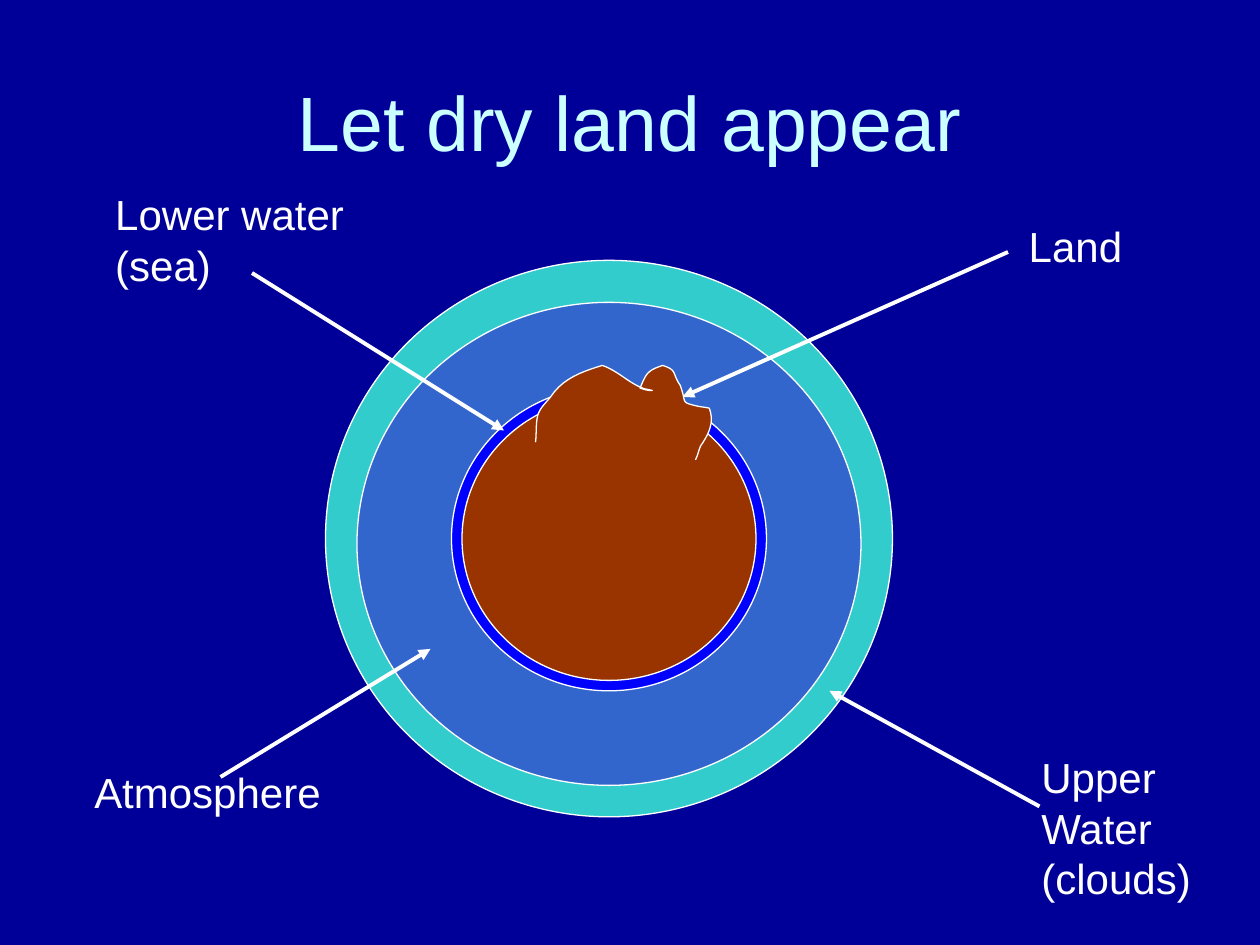
from dataclasses import dataclass

import pptx
import pptx.dml.color
import pptx.enum.shapes
import pptx.enum.text
import pptx.oxml
import pptx.oxml.ns
import pptx.util


@dataclass(frozen=True)
class Theme:
    background: str = "000099"
    title: str = "CCFFFF"
    ink: str = "FFFFFF"
    clouds: str = "33CCCC"
    air: str = "3366CC"
    sea: str = "0000FF"
    land: str = "993300"
    font: str = "Arial"
    title_size: float = 44
    label_size: float = 24
    outline: float = 0.75
    arrow: float = 2.25


@dataclass(frozen=True)
class Area:
    column: float
    row: float
    columns: float
    rows: float


@dataclass(frozen=True)
class Layer:
    color: str
    area: Area


@dataclass(frozen=True)
class Callout:
    text: str
    area: Area
    start: tuple[float, float]
    target: tuple[float, float]


THEME = Theme()
COLUMNS, ROWS = 120, 90  # square cells, a twelfth of an inch each
CELL = pptx.util.Inches(10) // COLUMNS
CURVE_STEPS = 10

TITLE_AREA = Area(9, 4, 102, 15)
LAYERS = [
    Layer(THEME.clouds, Area(31, 24.8, 54, 53)),
    Layer(THEME.air, Area(34, 28.8, 48, 46)),
    Layer(THEME.sea, Area(43, 36.8, 30, 29)),
    Layer(THEME.land, Area(44, 37.8, 28, 27)),
]
CALLOUTS = [
    Callout("Land", Area(96.8, 20.4, 11.3, 6), (96, 24), (65, 37.8)),
    Callout("Lower water\n(sea)", Area(9.8, 17.4, 24.2, 10.8), (24, 26), (48, 41)),
    Callout("Atmosphere", Area(7.8, 72.4, 24, 6), (21, 74), (41, 61.8)),
    Callout("Upper\nWater\n(clouds)", Area(98, 71, 16.7, 15.6), (99, 76.8), (79, 65.8)),
]

# Mountain outline in inches: a start, then two controls and an end per curve
MOUNTAIN_START = (4.25, 3.51)
MOUNTAIN_CURVES = [
    ((4.26, 3.44), (4.25, 3.36), (4.27, 3.29)),
    ((4.29, 3.23), (4.34, 3.19), (4.37, 3.15)),
    ((4.47, 3.0), (4.62, 2.95), (4.78, 2.9)),
    ((4.9, 2.94), (4.99, 3.04), (5.1, 3.08)),
    ((5.12, 3.09), (5.2, 3.1), (5.17, 3.1)),
    ((5.14, 3.1), (5.11, 3.09), (5.08, 3.08)),
    ((5.13, 2.96), (5.14, 2.94), (5.26, 2.9)),
    ((5.38, 2.94), (5.33, 2.96), (5.4, 3.06)),
    ((5.45, 3.2), (5.4, 3.19), (5.52, 3.22)),
    ((5.56, 3.23), (5.59, 3.23), (5.63, 3.24)),
    ((5.67, 3.35), (5.63, 3.44), (5.56, 3.54)),
    ((5.53, 3.62), (5.55, 3.58), (5.52, 3.65)),
]


def rgb(color: str) -> pptx.dml.color.RGBColor:
    return pptx.dml.color.RGBColor.from_string(color)


def cells(*counts: float) -> list[int]:
    return [round(count * CELL) for count in counts]


def frame(area: Area) -> list[int]:
    return cells(area.column, area.row, area.columns, area.rows)


def format_text(text_frame, size: float, color: str) -> None:
    for para in text_frame.paragraphs:
        for span in para.runs:
            span.font.name = THEME.font
            span.font.size = pptx.util.Pt(size)
            span.font.color.rgb = rgb(color)


def paint(shape, color: str) -> None:
    shape.shadow.inherit = False
    shape.fill.solid()
    shape.fill.fore_color.rgb = rgb(color)
    shape.line.color.rgb = rgb(THEME.ink)
    shape.line.width = pptx.util.Pt(THEME.outline)


def draw_title(page, text: str) -> None:
    title = page.shapes.title
    title.left, title.top, title.width, title.height = frame(TITLE_AREA)
    title.text_frame.text = text
    title.text_frame.vertical_anchor = pptx.enum.text.MSO_ANCHOR.MIDDLE
    title.text_frame.paragraphs[0].alignment = pptx.enum.text.PP_ALIGN.CENTER
    format_text(title.text_frame, THEME.title_size, THEME.title)


def draw_layer(page, layer: Layer) -> None:
    oval = pptx.enum.shapes.MSO_SHAPE.OVAL
    paint(page.shapes.add_shape(oval, *frame(layer.area)), layer.color)


def draw_callout(page, callout: Callout) -> None:
    arrow = page.shapes.add_connector(
        pptx.enum.shapes.MSO_CONNECTOR.STRAIGHT,
        *cells(*callout.start, *callout.target),
    )
    arrow.line.color.rgb = rgb(THEME.ink)
    arrow.line.width = pptx.util.Pt(THEME.arrow)
    tip = pptx.oxml.parse_xml(
        f'<a:tailEnd {pptx.oxml.ns.nsdecls("a")} type="triangle"/>'
    )
    arrow.line._get_or_add_ln().append(tip)
    no_effects = pptx.oxml.parse_xml(f'<a:effectLst {pptx.oxml.ns.nsdecls("a")}/>')
    arrow._element.spPr.append(no_effects)

    box = page.shapes.add_textbox(*frame(callout.area))
    box.text_frame.text = callout.text
    box.text_frame.word_wrap = False
    box.text_frame.auto_size = pptx.enum.text.MSO_AUTO_SIZE.SHAPE_TO_FIT_TEXT
    format_text(box.text_frame, THEME.label_size, THEME.ink)


def curve_point(points: tuple, t: float) -> tuple[int, int]:
    """Return the point at share t of a cubic curve, in slide units."""
    weights = ((1 - t) ** 3, 3 * t * (1 - t) ** 2, 3 * t**2 * (1 - t), t**3)
    x, y = (sum(w * p[axis] for w, p in zip(weights, points)) for axis in (0, 1))
    return pptx.util.Inches(x), pptx.util.Inches(y)


def draw_mountain(page) -> None:
    outline, start = [], MOUNTAIN_START
    for curve in MOUNTAIN_CURVES:
        points = (start, *curve)
        outline += [
            curve_point(points, step / CURVE_STEPS)
            for step in range(1, CURVE_STEPS + 1)
        ]
        start = curve[-1]
    first_x, first_y = (pptx.util.Inches(value) for value in MOUNTAIN_START)
    builder = page.shapes.build_freeform(first_x, first_y)
    builder.add_line_segments(outline, close=False)
    paint(builder.convert_to_shape(), THEME.land)


def main() -> None:
    deck = pptx.Presentation()
    deck.slide_width, deck.slide_height = cells(COLUMNS, ROWS)
    page = deck.slides.add_slide(deck.slide_layouts.get_by_name("Title Only"))
    page.background.fill.solid()
    page.background.fill.fore_color.rgb = rgb(THEME.background)

    # Earth and its shells, outermost first
    for layer in LAYERS:
        draw_layer(page, layer)

    # Labels with arrows, then the land rising over them
    for callout in CALLOUTS:
        draw_callout(page, callout)
    draw_mountain(page)

    draw_title(page, "Let dry land appear")
    deck.save("out.pptx")


if __name__ == "__main__":
    main()
